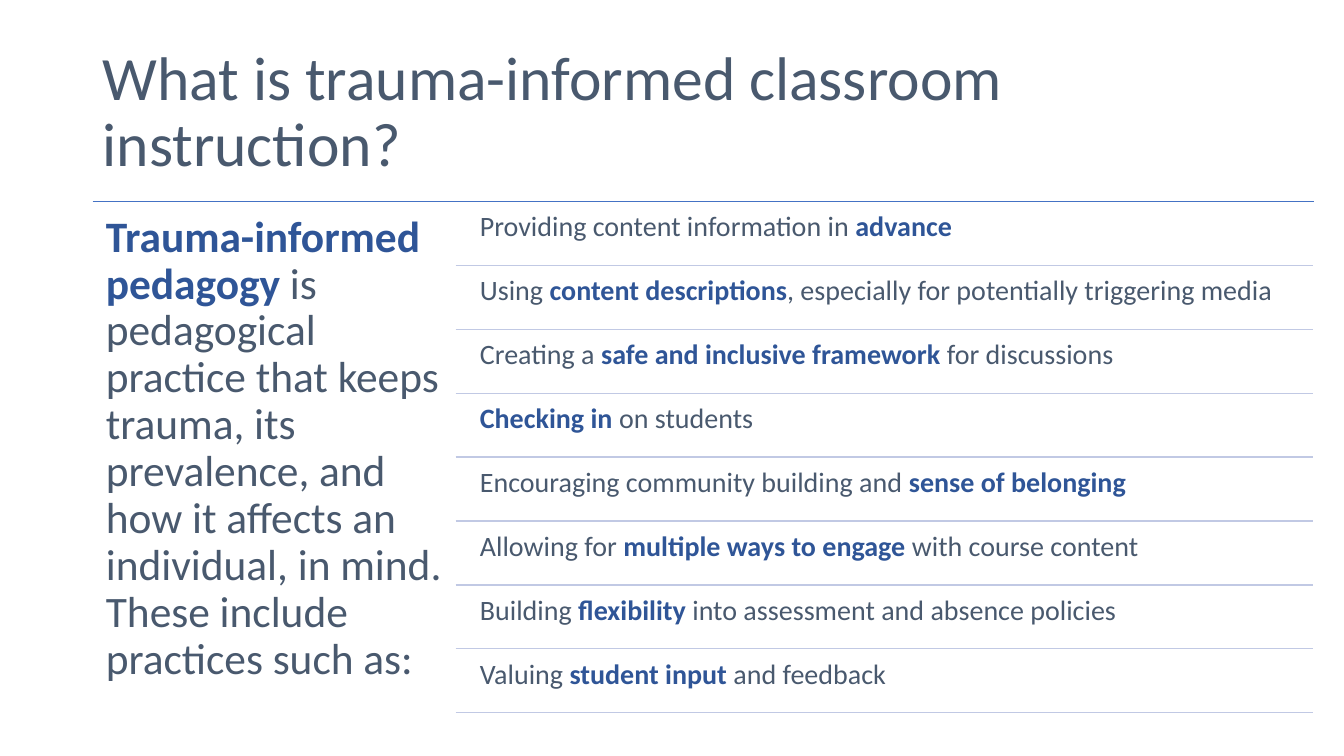
import pptx
import pptx.util
import pptx.dml.color
import pptx.enum.shapes
import pptx.enum.text
import pptx.oxml.ns
from lxml import etree

Inches, Pt = pptx.util.Inches, pptx.util.Pt
ANCHOR = pptx.enum.text.MSO_ANCHOR

COLORS = {"body": "49596E", "strong": "2F5597", "head": "4472C4", "rule": "C1C9E4"}

# Words between asterisks are bold
INTRO = ("*Trauma-informed pedagogy * is pedagogical practice that keeps trauma, its "
         "prevalence, and how it affects an individual, in mind. "
         "These include practices such as:").replace("pedagogy * is", "pedagogy *is")
ITEMS = [
    "Providing content information in *advance*",
    "Using *content descriptions*, especially for potentially triggering media",
    "Creating a *safe and inclusive framework *for discussions",
    "*Checking in *on students",
    "Encouraging community building and *sense of belonging*",
    "Allowing for *multiple ways to engage *with course content",
    "Building *flexibility* into assessment and absence policies",
    "Valuing *student input *and feedback",
]


def color(name):
    return pptx.dml.color.RGBColor.from_string(COLORS[name])


def write(frame, text, size, after=0, font="Calibri"):
    """Fill a frame with one paragraph, bold between asterisks."""
    para = frame.paragraphs[0]
    para.line_spacing = 0.9
    para.space_after = Pt(after)
    for n, part in enumerate(text.split("*")):
        if not part:
            continue
        bold = n % 2 == 1
        run = para.add_run()
        run.text = part
        run.font.name = font
        run.font.size = Pt(size)
        run.font.bold = bold
        run.font.color.rgb = color("strong" if bold else "body")


class Deck:
    """Holds the presentation, its style and the current slide."""

    def __init__(self):
        self.show = pptx.Presentation()
        self.show.slide_width = Inches(13.33)
        self.show.slide_height = Inches(7.5)
        self.slide = self.show.slides.add_slide(self.show.slide_layouts[6])

    def text(self, words, x, y, w, h, pad=(0.1, 0.05), anchor=ANCHOR.TOP, **form):
        box = self.slide.shapes.add_textbox(Inches(x), Inches(y), Inches(w), Inches(h))
        frame = box.text_frame
        frame.word_wrap = True
        frame.vertical_anchor = anchor
        frame.margin_left = frame.margin_right = Inches(pad[0])
        frame.margin_top = frame.margin_bottom = Inches(pad[1])
        write(frame, words, **form)

    def rule(self, left, right, y, tint):
        line = self.slide.shapes.add_connector(
            pptx.enum.shapes.MSO_CONNECTOR.STRAIGHT,
            Inches(left), Inches(y), Inches(right), Inches(y))
        line.line.color.rgb = color(tint)
        line.line.width = Pt(1)
        etree.SubElement(line._element.spPr, pptx.oxml.ns.qn("a:effectLst"))


def main():
    deck = Deck()
    left, right, top, end = 0.92, 13.02, 2, 7.07

    # Title
    deck.text("What is trauma-informed classroom instruction?",
              left, 0.4, 11.5, 1.45, anchor=ANCHOR.MIDDLE, size=44)

    # Definition on the left
    deck.rule(left, right + 0.01, top, "head")
    deck.text(INTRO, left, top, 3.61, 5.1, pad=(0.13, 0.13), size=31, after=11)

    # Practices on the right
    step = (end - top) / len(ITEMS)
    for n, item in enumerate(ITEMS):
        y = top + n * step
        deck.text(item, 4.68, y + 0.03, 8.34, 0.6, pad=(0.08, 0.08), size=20, after=7)
        deck.rule(4.52, right, y + step, "rule")

    deck.show.save("out.pptx")


if __name__ == "__main__":
    main()
